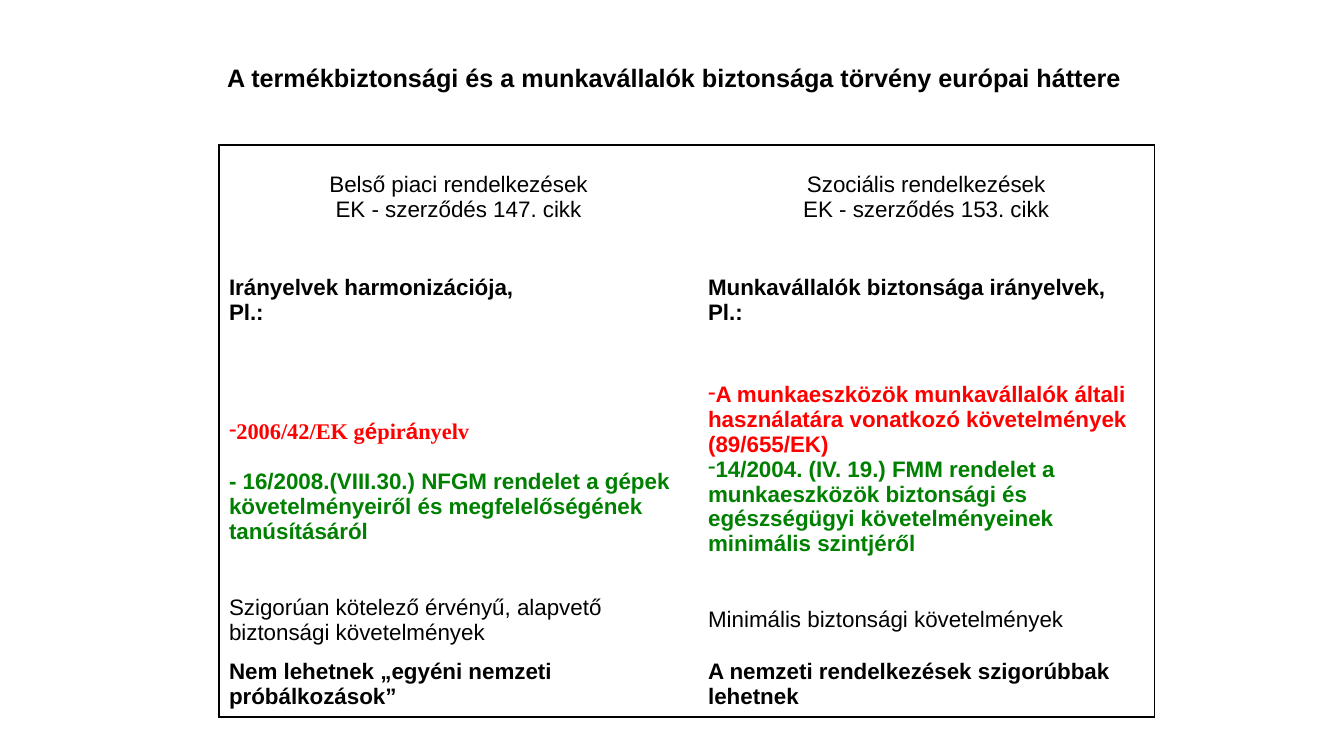
from lxml import etree
from pptx import Presentation
from pptx import util as u
from pptx.dml.color import RGBColor
from pptx.enum import text
from pptx.oxml import ns

BLACK = RGBColor(0, 0, 0)
RED = RGBColor(255, 0, 0)
GREEN = RGBColor(0, 128, 0)
PX = 914400 / 100.8
SANS, SERIF = "Arial", "Times New Roman"


def px(length):
    return u.Emu(round(length * PX))


def add_run(paragraph, words, color=BLACK, bold=False, name=SANS, size=16):
    run = paragraph.add_run()
    run.text = words
    for key, value in {"name": name, "size": u.Pt(size), "bold": bold}.items():
        setattr(run.font, key, value)
    run.font.color.rgb = color


presentation = Presentation()
presentation.slide_width = u.Inches(13.33)
presentation.slide_height = u.Inches(7.5)
slide = presentation.slides.add_slide(presentation.slide_layouts[6])

title = slide.shapes.add_textbox(px(69), px(28), px(1210), px(126)).text_frame
title_format = {
    "word_wrap": True,
    "vertical_anchor": text.MSO_ANCHOR.MIDDLE,
    "margin_top": px(5),
    "margin_bottom": px(33),
}
for key, value in title_format.items():
    setattr(title, key, value)
title.paragraphs[0].alignment = text.PP_ALIGN.CENTER
add_run(title.paragraphs[0],
        "A termékbiztonsági és a munkavállalók biztonsága törvény európai háttere",
        bold=True, size=18)

plain, bold = (BLACK, False), (BLACK, True)
red, green, red_serif = (RED, True), (GREEN, True), (RED, True, SERIF)
rows = [
    (105, [[("Belső piaci rendelkezések", *plain)],
           [("EK - szerződés 147. cikk", *plain)]],
     [[("Szociális rendelkezések", *plain)],
      [("EK - szerződés 153. cikk", *plain)]]),
    (101, [[("Irányelvek harmonizációja,", *bold)], [("Pl.:", *bold)]],
     [[("Munkavállalók biztonsága irányelvek,", *bold)], [("Pl.:", *bold)]]),
    (237, [[("2006/42/EK g", *red_serif), ("é", *red), ("pir", *red_serif),
            ("á", *red), ("nyelv", *red_serif)],
           [("- 16/2008.(VIII.30.) NFGM rendelet a gépek követelményeiről "
             "és megfelelőségének tanúsításáról", *green)]],
     [[("A munkaeszközök munkavállalók általi használatára vonatkozó "
        "követelmények (89/655/EK)", *red)],
      [("14/2004. (IV. 19.) FMM rendelet a munkaeszközök biztonsági és "
        "egészségügyi követelményeinek minimális szintjéről", *green)]]),
    (64, [[("Szigorúan kötelező érvényű, alapvető biztonsági követelmények", *plain)]],
     [[("Minimális biztonsági követelmények", *plain)]]),
    (65, [[("Nem lehetnek „egyéni nemzeti próbálkozások”", *bold)]],
     [[("A nemzeti rendelkezések szigorúbbak lehetnek", *bold)]]),
]
widths = [479, 456]
heights = [row[0] for row in rows]
table = slide.shapes.add_table(len(rows), len(widths), px(219), px(145),
                               px(sum(widths)), px(sum(heights))).table
table.first_row = table.horz_banding = False
for column, width in zip(table.columns, widths):
    column.width = px(width)

cell_format = {
    "vertical_anchor": text.MSO_ANCHOR.MIDDLE,
    "margin_left": px(10),
    "margin_right": px(10),
    "margin_top": px(5),
    "margin_bottom": px(5),
}
for row_index, (height, *contents) in enumerate(rows):
    table.rows[row_index].height = px(height)
    for column_index, paragraphs in enumerate(contents):
        cell = table.cell(row_index, column_index)
        for key, value in cell_format.items():
            setattr(cell, key, value)
        outer_edges = {
            "a:lnL": column_index == 0,
            "a:lnR": column_index == 1,
            "a:lnT": row_index == 0,
            "a:lnB": row_index == len(rows) - 1,
        }
        properties = cell._tc.get_or_add_tcPr()
        for edge, visible in outer_edges.items():
            line = etree.SubElement(properties, ns.qn(edge), w=str(u.Pt(1)))
            if visible:
                fill = etree.SubElement(line, ns.qn("a:solidFill"))
                etree.SubElement(fill, ns.qn("a:srgbClr"), val=str(BLACK))
            else:
                etree.SubElement(line, ns.qn("a:noFill"))
        cell.fill.background()
        for index, runs in enumerate(paragraphs):
            frame = cell.text_frame
            paragraph = frame.add_paragraph() if index else frame.paragraphs[0]
            if row_index == 0:
                paragraph.alignment = text.PP_ALIGN.CENTER
            if row_index == 2:
                settings = paragraph._p.get_or_add_pPr()
                if not runs[0][0].startswith("-"):
                    settings.set("marL", "0")
                    settings.set("indent", "0")
                    etree.SubElement(settings, ns.qn("a:buFontTx"))
                    etree.SubElement(settings, ns.qn("a:buChar"), char="-")
                tabs = etree.SubElement(settings, ns.qn("a:tabLst"))
                etree.SubElement(tabs, ns.qn("a:tab"), pos=str(px(16)), algn="l")
            for run in runs:
                add_run(paragraph, *run)

directives = table.cell(2, 0)
directives.margin_top = px(30)
directives.text_frame.paragraphs[1].space_before = u.Pt(18)

presentation.save("out.pptx")
